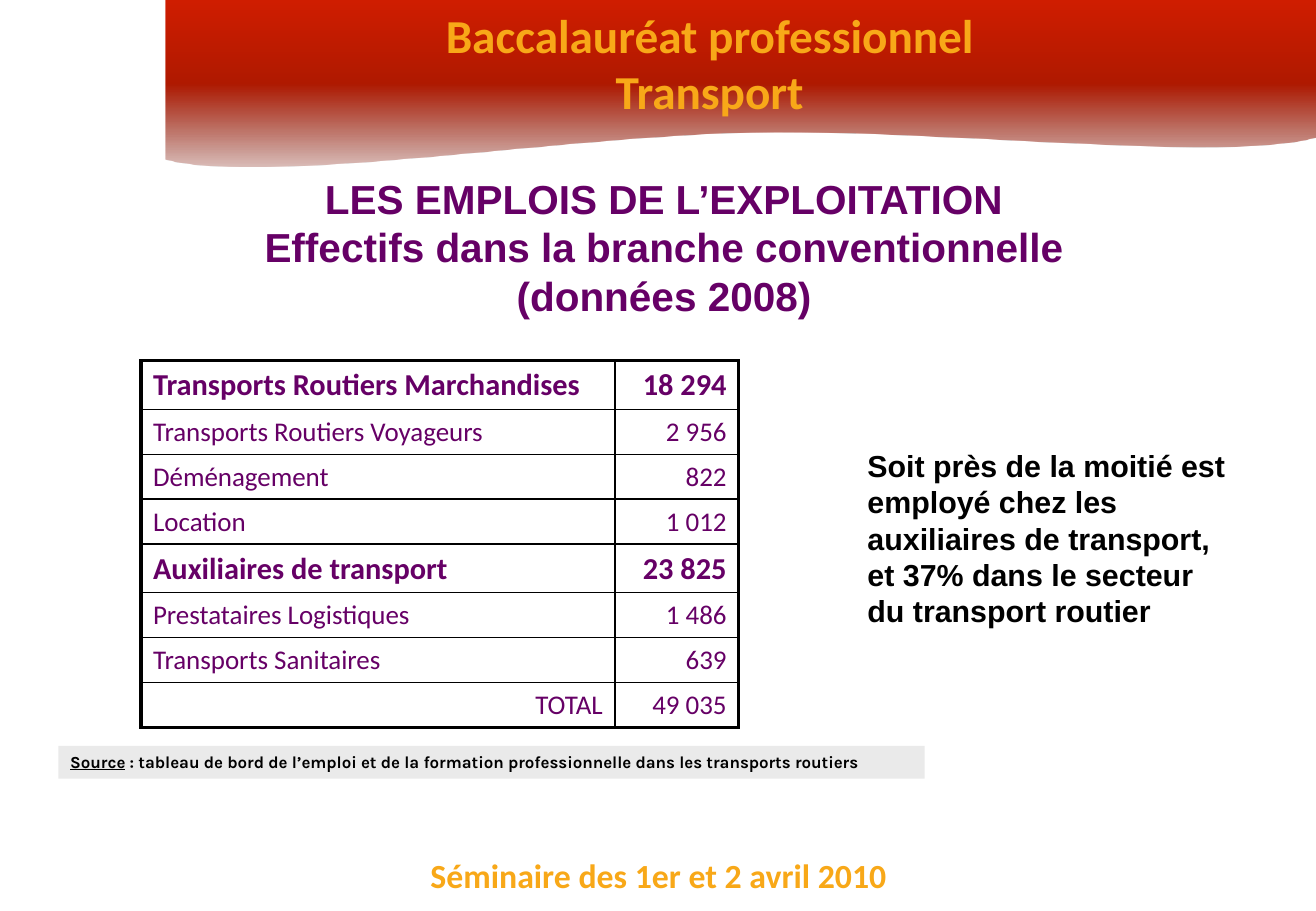
from dataclasses import dataclass
from typing import Optional

from lxml import etree
from pptx import Presentation
from pptx import util as u
from pptx.dml import color
from pptx.enum import text
from pptx.oxml import ns

ORANGE = "F8A818"
PURPLE = "660066"
BLACK = "000000"
LEFT, CENTER, RIGHT = text.PP_ALIGN.LEFT, text.PP_ALIGN.CENTER, text.PP_ALIGN.RIGHT
THIN, THICK = 1, 2.25
CURVE_STEPS = 24


@dataclass
class Style:
    font: str
    size: float
    color: str
    bold: bool = True
    align: text.PP_ALIGN = LEFT


@dataclass
class TextBlock:
    left: float
    top: float
    width: float
    height: float
    content: str
    style: Style


@dataclass
class JobRow:
    sector: str
    headcount: str
    bold: bool = False
    align: text.PP_ALIGN = LEFT


TEXT_BLOCKS = [
    TextBlock(2.71, 6.99, 5.42, 0.44, "Séminaire des 1er et 2 avril 2010",
              Style("Calibri", 20, ORANGE, align=CENTER)),
    TextBlock(3.13, 0, 5.42, 1.04, "Baccalauréat professionnel\nTransport",
              Style("Calibri", 28, ORANGE, align=CENTER)),
    TextBlock(0.8, 1.38, 9.33, 1.18,
              "LES EMPLOIS DE L’EXPLOITATION\v"
              "Effectifs dans la branche conventionnelle\v(données 2008)",
              Style("Arial", 24, PURPLE, align=CENTER)),
    TextBlock(7.04, 3.63, 3.21, 1.6,
              "Soit près de la moitié est employé chez les auxiliaires de transport, "
              "et 37% dans le secteur du transport routier",
              Style("Arial", 18, BLACK)),
]
JOB_ROWS = [
    JobRow("Transports Routiers Marchandises", "18 294", bold=True),
    JobRow("Transports Routiers Voyageurs", "2 956"),
    JobRow("Déménagement", "822"),
    JobRow("Location", "1 012"),
    JobRow("Auxiliaires de transport", "23 825", bold=True),
    JobRow("Prestataires Logistiques", "1 486"),
    JobRow("Transports Sanitaires", "639"),
    JobRow("TOTAL", "49 035", align=RIGHT),
]
WAVE_START = (10.83, 1.13)
WAVE_CURVES = [
    ((10.06, 1.34), (7.76, 1.06), (6.18, 1.09)),
    ((4.6, 1.12), (2.16, 1.53), (1.36, 1.31)),
]


def rgb(value: str) -> color.RGBColor:
    return color.RGBColor.from_string(value)


def write(frame, content: str, style: Style) -> None:
    frame.text = content
    frame.word_wrap = True
    for paragraph in frame.paragraphs:
        paragraph.alignment = style.align
        for run in paragraph.runs:
            run.font.name = style.font
            run.font.size = u.Pt(style.size)
            run.font.bold = style.bold
            run.font.color.rgb = rgb(style.color)


def add_text(slide, block: TextBlock):
    box = slide.shapes.add_textbox(u.Inches(block.left), u.Inches(block.top),
                                   u.Inches(block.width), u.Inches(block.height))
    write(box.text_frame, block.content, block.style)
    return box


def add_xml_color(parent, value: str, alpha: Optional[int] = None) -> None:
    node = etree.SubElement(parent, ns.qn("a:srgbClr"), val=value)
    if alpha is not None:
        etree.SubElement(node, ns.qn("a:alpha"), val=str(alpha * 1000))


def bezier(start, first, second, end) -> list[tuple[float, float]]:
    points = []
    for step in range(1, CURVE_STEPS + 1):
        t = step / CURVE_STEPS
        weights = ((1 - t) ** 3, 3 * t * (1 - t) ** 2, 3 * t * t * (1 - t), t ** 3)
        x, y = (sum(w * p[axis] for w, p in zip(weights, (start, first, second, end)))
                for axis in (0, 1))
        points.append((x, y))
    return points


def add_banner(slide) -> None:
    outline = [(10.83, 0), WAVE_START]
    for curve in WAVE_CURVES:
        outline += bezier(outline[-1], *curve)
    builder = slide.shapes.build_freeform(u.Inches(1.36), 0)
    builder.add_line_segments([(u.Inches(x), u.Inches(y)) for x, y in outline], close=True)
    banner = builder.convert_to_shape()
    banner.shadow.inherit = False
    banner.line.fill.background()
    banner.fill.gradient()
    gradient = banner.fill._fill._gradFill
    for child in list(gradient):
        gradient.remove(child)
    stops = etree.SubElement(gradient, ns.qn("a:gsLst"))
    for position, value, alpha in ((0, "7B1100", 27), (50, "AF1900", None), (100, "D01D00", None)):
        stop = etree.SubElement(stops, ns.qn("a:gs"), pos=str(position * 1000))
        add_xml_color(stop, value, alpha)
    etree.SubElement(gradient, ns.qn("a:lin"), ang=str(270 * 60000), scaled="0")


def set_borders(cell, widths: dict[str, float]) -> None:
    properties = cell._tc.get_or_add_tcPr()
    for side, width in widths.items():
        line = etree.SubElement(properties, ns.qn(f"a:ln{side}"), w=str(u.Pt(width)))
        add_xml_color(etree.SubElement(line, ns.qn("a:solidFill")), BLACK)


def add_job_table(slide) -> None:
    table = slide.shapes.add_table(len(JOB_ROWS), 2, u.Inches(1.16), u.Inches(2.97),
                                   u.Inches(4.92), u.Inches(3)).table
    table.first_row = False
    table.horz_banding = False
    for column, width in zip(table.columns, (3.9, 1.02)):
        column.width = u.Inches(width)
    last = len(JOB_ROWS) - 1
    for index, job in enumerate(JOB_ROWS):
        table.rows[index].height = u.Inches(0.4 if job.bold else 0.37)
        for column, (content, align) in enumerate(((job.sector, job.align),
                                                   (job.headcount, RIGHT))):
            cell = table.cell(index, column)
            style = Style("Calibri", 18 if job.bold else 16, PURPLE, job.bold, align)
            write(cell.text_frame, content, style)
            set_borders(cell, {
                "L": THICK if column == 0 else THIN,
                "R": THICK if column == 1 else THIN,
                "T": THICK if index == 0 else THIN,
                "B": THICK if index == last else THIN,
            })
            cell.fill.background()


def add_source(slide) -> None:
    source = add_text(slide, TextBlock(0.48, 6.14, 7.13, 0.27, "Source",
                                       Style("Karla", 10, BLACK)))
    source.fill.solid()
    source.fill.fore_color.rgb = rgb("EAEAEA")
    paragraph = source.text_frame.paragraphs[0]
    paragraph.runs[0].font.underline = True
    citation = paragraph.add_run()
    citation.text = (" : tableau de bord de l’emploi et de la formation professionnelle "
                     "dans les transports routiers")
    citation.font.name = "Karla"
    citation.font.size = u.Pt(10)
    citation.font.bold = True
    citation.font.color.rgb = rgb(BLACK)


def main() -> None:
    deck = Presentation()
    deck.slide_width = u.Inches(10.83)
    deck.slide_height = u.Inches(7.5)
    slide = deck.slides.add_slide(deck.slide_layouts[6])
    add_banner(slide)
    for block in TEXT_BLOCKS:
        add_text(slide, block)
    add_job_table(slide)
    add_source(slide)
    deck.save("out.pptx")


if __name__ == "__main__":
    main()
